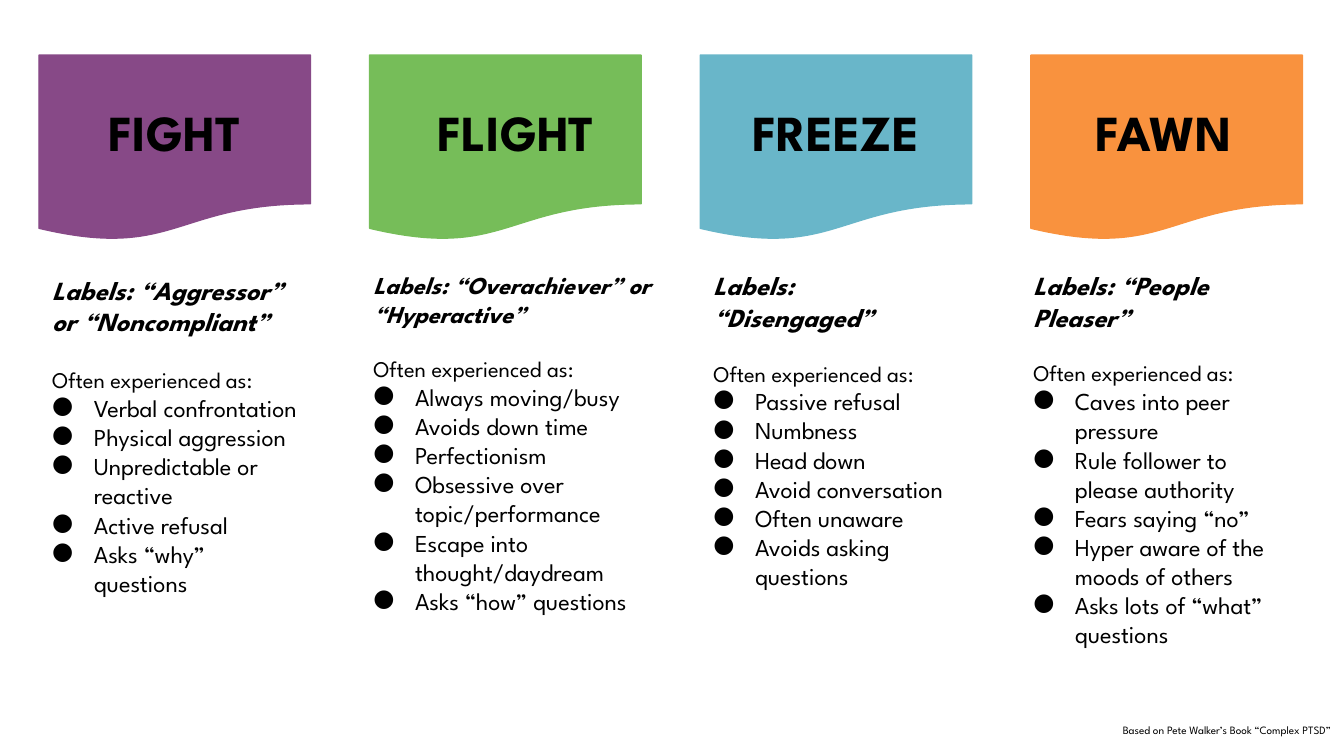
import pptx
import pptx.util
import pptx.dml.color
import pptx.enum.shapes
import pptx.enum.text
import pptx.oxml.ns
import lxml.etree

Inches = pptx.util.Inches
Pt = pptx.util.Pt
RGBColor = pptx.dml.color.RGBColor
PP_ALIGN = pptx.enum.text.PP_ALIGN
qn = pptx.oxml.ns.qn

FONT = "League Spartan"
LINE_HEIGHT = 1.21  # line height as a multiple of the text size
COLORS = {
    "text": "000000",
    "fight": "874987",
    "flight": "76BD59",
    "freeze": "69B6C9",
    "fawn": "F9923E",
}

# title, text left, text width, text height, label size, spacer size, label, experiences
RESPONSES = [
    ("FIGHT", 0.29, 2.02, 4.6, 14, 13, "Labels: “Aggressor” or “Noncompliant”",
     ["Verbal confrontation", "Physical aggression", "Unpredictable or reactive",
      "Active refusal", "Asks “why” questions"]),
    ("FLIGHT", 2.68, 2.32, 4.28, 13, 12, "Labels: “Overachiever” or “Hyperactive”",
     ["Always moving/busy", "Avoids down time", "Perfectionism",
      "Obsessive over topic/performance", "Escape into thought/daydream",
      "Asks “how” questions"]),
    ("FREEZE", 5.21, 2.02, 4.09, 14, 12, "Labels: “Disengaged”",
     ["Passive refusal", "Numbness", "Head down", "Avoid conversation",
      "Often unaware", "Avoids asking questions"]),
    ("FAWN", 7.59, 2.14, 4.53, 14, 12, "Labels: “People Pleaser”",
     ["Caves into peer pressure", "Rule follower to please authority",
      "Fears saying “no”", "Hyper aware of the moods of others",
      "Asks lots of “what” questions"]),
]


def add_text_frame(slide, left, top, width, height):
    text_frame = slide.shapes.add_textbox(
        Inches(left), Inches(top), Inches(width), Inches(height)).text_frame
    text_frame.word_wrap = True
    text_frame.margin_left = text_frame.margin_right = Inches(0.1)
    text_frame.margin_top = text_frame.margin_bottom = Inches(0.1)
    return text_frame


def write_paragraph(paragraph, text, size, bold=False, italic=False):
    paragraph.text = text
    font = paragraph.runs[0].font
    font.name = FONT
    font.size = Pt(size)
    font.bold = bold
    font.italic = italic
    font.color.rgb = RGBColor.from_string(COLORS["text"])


# Widescreen 16:9 slide
presentation = pptx.Presentation()
presentation.slide_width = Inches(10)
presentation.slide_height = Inches(10) * 9 // 16
slide = presentation.slides.add_slide(presentation.slide_layouts[6])

# Coloured banners
for column, response in enumerate(RESPONSES):
    color = RGBColor.from_string(COLORS[response[0].lower()])
    banner = slide.shapes.add_shape(
        pptx.enum.shapes.MSO_SHAPE.FLOWCHART_DOCUMENT,
        Inches(0.29 + 2.46 * column), Inches(0.41), Inches(2.02), Inches(1.38))
    banner.shadow.inherit = False
    banner.fill.solid()
    banner.fill.fore_color.rgb = color
    banner.line.color.rgb = color
    banner.line.width = Pt(0.75)

# Title, labels and experiences of each response
for title, left, width, height, label_size, spacer, label, experiences in RESPONSES:
    text_frame = add_text_frame(slide, left, 0.65, width, height)

    paragraph = text_frame.paragraphs[0]
    write_paragraph(paragraph, title, 27, bold=True)
    paragraph.alignment = PP_ALIGN.CENTER

    paragraph = text_frame.add_paragraph()
    write_paragraph(paragraph, label, label_size, bold=True, italic=True)
    paragraph.space_before = Pt(round((24 + 2 * spacer) * LINE_HEIGHT, 1))

    paragraph = text_frame.add_paragraph()
    write_paragraph(paragraph, "Often experienced as:", 12)
    paragraph.space_before = Pt(round(spacer * LINE_HEIGHT, 1))

    for experience in experiences:
        paragraph = text_frame.add_paragraph()
        write_paragraph(paragraph, experience, 13)
        properties = paragraph._p.get_or_add_pPr()
        properties.set("marL", str(Inches(0.31)))
        properties.set("indent", str(Inches(-0.33)))
        bullet_color = lxml.etree.SubElement(properties, qn("a:buClr"))
        lxml.etree.SubElement(bullet_color, qn("a:srgbClr"), val=COLORS["text"])
        lxml.etree.SubElement(properties, qn("a:buFont"), typeface=FONT)
        lxml.etree.SubElement(properties, qn("a:buChar"), char="●")

# Source note
text_frame = add_text_frame(slide, 3.25, 5.33, 6.75, 0.3)
paragraph = text_frame.paragraphs[0]
write_paragraph(paragraph, "Based on Pete Walker’s Book “Complex PTSD”", 6)
paragraph.alignment = PP_ALIGN.RIGHT

presentation.save("out.pptx")
